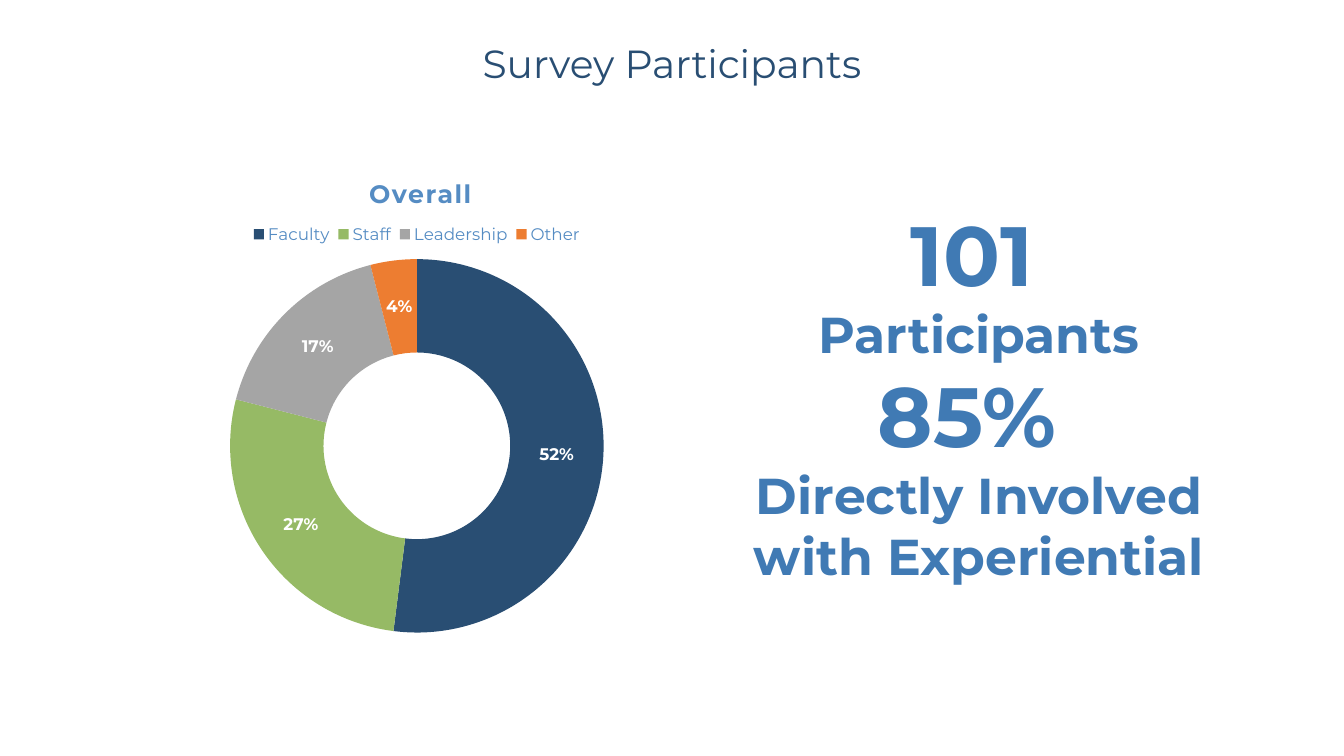
from lxml.etree import SubElement
from pptx import Presentation
from pptx.chart.data import CategoryChartData
from pptx.dml.color import RGBColor
from pptx.enum.chart import XL_CHART_TYPE, XL_LEGEND_POSITION
from pptx.enum.text import MSO_ANCHOR, PP_ALIGN
from pptx.oxml.ns import qn
from pptx.util import Inches, Pt

FACE = "Montserrat"
NAVY, BLUE, SKY, WHITE = "294E73", "407AB4", "558CC3", "FFFFFF"
SHARES = [
    ("Faculty", 52, NAVY),
    ("Staff", 27, "96BA65"),
    ("Leadership", 17, "A5A5A5"),
    ("Other", 4, "ED7D31"),
]
FACTS = [
    [("101", 60), (" ", 36)],
    [("Participants", 36)],
    [("85% ", 60)],
    [("Directly Involved with Experiential", 36)],
]


def paint(hue):
    return RGBColor.from_string(hue)


def style(font, size, hue, bold=False):
    font.name, font.size, font.bold = FACE, Pt(size), bold
    font.color.rgb = paint(hue)


def add_run(para, text, size, hue, bold=False):
    run = para.add_run()
    run.text = text
    style(run.font, size, hue, bold)
    return run


def place(part, tag, **spots):
    """Set the layout of a chart part, ahead of its child named tag."""
    old = part.find(qn("c:layout"))
    if old is not None:
        part.remove(old)
    layout = part.makeelement(qn("c:layout"), {})
    part.find(qn(tag)).addprevious(layout)
    manual = SubElement(layout, qn("c:manualLayout"))
    if tag == "c:doughnutChart":
        SubElement(manual, qn("c:layoutTarget")).set("val", "inner")
    for mode in ("xMode", "yMode"):
        SubElement(manual, qn("c:" + mode)).set("val", "edge")
    for name, value in spots.items():
        SubElement(manual, qn("c:" + name)).set("val", str(value))


def add_title(slide, box):
    title = slide.shapes.title
    title.left, title.top, title.width, title.height = map(Inches, box)
    frame = title.text_frame
    frame.word_wrap = True
    frame.vertical_anchor = MSO_ANCHOR.TOP
    para = frame.paragraphs[0]
    para.alignment = PP_ALIGN.CENTER
    para.line_spacing = 1.0
    add_run(para, "Survey Participants", 28, NAVY)


def add_ring(slide, box):
    data = CategoryChartData()
    data.categories = [name for name, _, _ in SHARES]
    data.add_series("Series 1", [share for _, share, _ in SHARES])
    chart = slide.shapes.add_chart(
        XL_CHART_TYPE.DOUGHNUT, *map(Inches, box), data).chart
    style(chart.font, 10, NAVY)

    # Heading
    chart.has_title = True
    para = chart.chart_title.text_frame.paragraphs[0]
    run = add_run(para, "Overall", 18, SKY, True)
    run.font._element.set("spc", "100")
    place(chart.chart_title._element, "c:overlay", x=0.43, y=0.05)

    # Legend
    chart.has_legend = True
    legend = chart.legend
    legend.position = XL_LEGEND_POSITION.TOP
    legend.include_in_layout = False
    style(legend.font, 12, SKY)
    place(legend._element, "c:overlay", x=0.27, y=0.14, w=0.46, h=0.07)

    # Ring and its labels
    plot = chart.plots[0]
    plot.vary_by_categories = True
    place(plot._element.getparent(), "c:doughnutChart",
          x=0.25, y=0.225, w=0.5, h=0.75)
    plot._element.find(qn("c:holeSize")).set("val", "50")
    series = plot.series[0]
    for i, (_, _, hue) in enumerate(SHARES):
        fill = series.points[i].format.fill
        fill.solid()
        fill.fore_color.rgb = paint(hue)
    labels = series.data_labels
    labels.show_percentage, labels.show_value = True, False
    labels.number_format, labels.number_format_is_linked = "0%", False
    style(labels.font, 12, WHITE, True)


def add_facts(slide, box):
    frame = slide.shapes.add_textbox(*map(Inches, box)).text_frame
    frame.word_wrap = True
    for i, runs in enumerate(FACTS):
        para = frame.add_paragraph() if i else frame.paragraphs[0]
        para.alignment = PP_ALIGN.CENTER
        for text, size in runs:
            add_run(para, text, size, BLUE, True)


def main():
    deck = Presentation()
    deck.slide_width, deck.slide_height = Inches(13.33), Inches(7.5)
    slide = deck.slides.add_slide(deck.slide_layouts[5])
    add_facts(slide, (7.19, 1.96, 5.04, 3.94))
    add_title(slide, (3.33, 0.34, 6.67, 0.57))
    add_ring(slide, (0.43, 1.46, 7.41, 4.94))
    deck.save("out.pptx")


if __name__ == "__main__":
    main()
